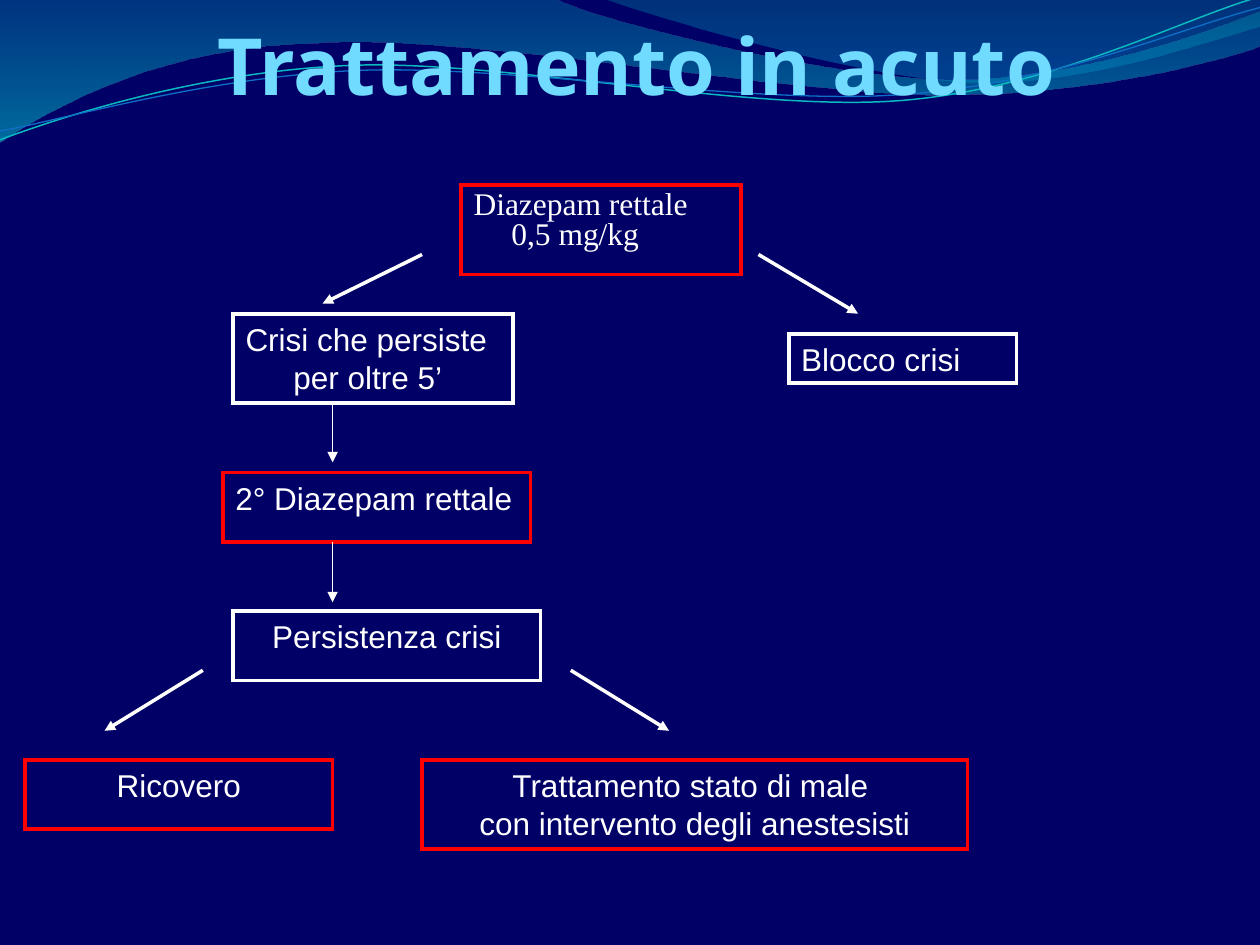
import pptx
import pptx.util
import pptx.dml.color
import pptx.enum.shapes
import pptx.enum.text
import pptx.oxml.ns
from lxml import etree

Inches, Pt = pptx.util.Inches, pptx.util.Pt
RGBColor = pptx.dml.color.RGBColor
ALIGN = pptx.enum.text.PP_ALIGN
ANCHOR = pptx.enum.text.MSO_ANCHOR
qn = pptx.oxml.ns.qn

NAVY = RGBColor(0x00, 0x00, 0x66)
WHITE = RGBColor(0xFF, 0xFF, 0xFF)
RED = RGBColor(0xFF, 0x00, 0x00)
SKY = RGBColor(0x71, 0xDA, 0xFF)
OCEAN = RGBColor(0x00, 0x74, 0xA1)
AQUA = RGBColor(0x00, 0xC6, 0xCF)
TEAL = RGBColor(0x00, 0xA1, 0xA9)
AZURE = RGBColor(0x00, 0x8B, 0xBF)
TURQUOISE = RGBColor(0x0A, 0xB8, 0xBF)
BLUE = RGBColor(0x0F, 0x6F, 0xC6)

# A segment of two numbers is a straight line, one of six a Bezier curve.
BROAD_WAVE = [(0, 0), (4.4, -0.01), (4.76, 0.17, 6.64, 0.63, 7.58, 0.63),
              (8.53, 0.63, 9.58, 0.26, 10, 0.09), (10.01, 0.36),
              (9.83, 0.44, 8.7, 0.76, 7.46, 0.75),
              (6.22, 0.75, 3.82, 0.28, 2.57, 0.34),
              (1.29, 0.36, 0.46, 0.83, -0.01, 1.13), (0, 0)]
RIGHT_WAVE = [(4.79, -0.01), (5.09, 0.11, 6.82, 0.62, 7.69, 0.65),
              (8.56, 0.69, 9.61, 0.32, 10, 0.21), (10, 0), (4.79, -0.01)]
UPPER_STRAND = [(0, 1.11), (0.48, 0.93, 1.58, 0.57, 2.77, 0.52),
                (3.95, 0.47, 5.93, 0.89, 7.13, 0.8),
                (8.33, 0.71, 9.38, 0.15, 9.98, -0.02)]
LOWER_STRAND = [(0, 1.04), (0.47, 0.96, 1.64, 0.61, 2.83, 0.56),
                (4.03, 0.51, 5.97, 0.84, 7.17, 0.75),
                (8.36, 0.67, 9.41, 0.21, 10, 0.06)]

# left, top, width, height, border, lines, text format
BOXES = [
    (3.66, 1.47, 2.22, 0.71, RED, ["Diazepam rettale 0,5 mg/kg"],
     dict(font="Times New Roman", hang=0.3, spacing=0.8, before=2)),
    (6.26, 2.65, 1.81, 0.39, WHITE, ["Blocco crisi"], {}),
    (1.85, 2.49, 2.22, 0.71, WHITE, ["Crisi che persiste per oltre 5’"], {}),
    (1.77, 3.75, 2.44, 0.55, RED, ["2° Diazepam rettale"], {}),
    (1.85, 4.85, 2.44, 0.55, WHITE, ["Persistenza crisi"], dict(align=ALIGN.CENTER)),
    (0.2, 6.03, 2.44, 0.55, RED, ["Ricovero"], dict(align=ALIGN.CENTER)),
    (3.35, 6.03, 4.33, 0.71, RED,
     ["Trattamento stato di male ", "con intervento degli anestesisti"],
     dict(align=ALIGN.CENTER)),
]

# start x, start y, end x, end y, width
ARROWS = [
    (6.02, 2.02, 6.81, 2.49, 2),
    (3.35, 2.02, 2.56, 2.41, 2),
    (2.64, 3.2, 2.64, 3.67, 0.75),
    (2.64, 4.3, 2.64, 4.78, 0.75),
    (1.61, 5.32, 0.83, 5.8, 2),
    (4.53, 5.32, 5.31, 5.8, 2),
]


def add_outline(slide, segments, close):
    """Join the segment ends by lines, then bend those that are curves."""
    ends = [(Inches(seg[-2]), Inches(seg[-1])) for seg in segments]
    builder = slide.shapes.build_freeform(*ends[0])
    builder.add_line_segments(ends[1:], close=False)
    s = builder.convert_to_shape()
    s.shadow.inherit = False
    path = next(s._element.iter(qn("a:path")))
    for line, seg in zip(path.findall(qn("a:lnTo")), segments[1:]):
        if len(seg) == 6:
            curve = etree.Element(qn("a:cubicBezTo"))
            for x, y in zip(seg[::2], seg[1::2]):
                etree.SubElement(curve, qn("a:pt"), x=str(Inches(x) - s.left),
                                 y=str(Inches(y) - s.top))
            path.replace(line, curve)
    if close:
        etree.SubElement(path, qn("a:close"))
    return s


def add_wave(slide, segments, stops):
    """Filled wave; each stop is position, colour, opacity percent."""
    s = add_outline(slide, segments, True)
    s.line.fill.background()
    s.fill.gradient()
    s.fill.gradient_angle = 270
    for stop, (position, color, opacity) in zip(s.fill.gradient_stops, stops):
        stop.position = position
        stop.color.rgb = color
    for clr, stop in zip(s._element.spPr.iter(qn("a:srgbClr")), stops):
        etree.SubElement(clr, qn("a:alpha"), val=str(stop[2] * 1000))


def add_strand(slide, segments, color, width):
    s = add_outline(slide, segments, False)
    s.fill.background()
    s.line.color.rgb = color
    s.line.width = Pt(width)


def set_text(tf, lines, font="Arial", size=18, color=WHITE, bold=False,
             align=ALIGN.LEFT, anchor=ANCHOR.TOP, hang=0.38, spacing=None, before=0):
    tf.word_wrap = True
    tf.vertical_anchor = anchor
    for i, line in enumerate(lines):
        p = tf.paragraphs[0] if i == 0 else tf.add_paragraph()
        p.alignment = align
        p.line_spacing = spacing
        p.space_before = Pt(before)
        if hang:
            pPr = p._p.get_or_add_pPr()
            pPr.set("marL", str(Inches(hang)))
            pPr.set("indent", str(-Inches(hang)))
        r = p.add_run()
        r.text = line
        r.font.name = font
        r.font.size = Pt(size)
        r.font.bold = bold
        r.font.color.rgb = color


def add_title(slide, text):
    sp = slide.shapes.add_textbox(Inches(0.55), Inches(0.31), Inches(9), Inches(0.57))
    tf = sp.text_frame
    tf.margin_left = tf.margin_right = tf.margin_bottom = 0
    set_text(tf, [text], font="Open Sans", size=45, color=SKY, bold=True,
             align=ALIGN.CENTER, anchor=ANCHOR.BOTTOM, hang=0)


def add_box(slide, left, top, width, height, border, lines, text_format):
    s = slide.shapes.add_shape(pptx.enum.shapes.MSO_SHAPE.RECTANGLE, Inches(left),
                               Inches(top), Inches(width), Inches(height))
    s.shadow.inherit = False
    s.fill.background()
    s.line.color.rgb = border
    s.line.width = Pt(2)
    etree.SubElement(s.line._get_or_add_ln(), qn("a:miter"), lim="800000")
    set_text(s.text_frame, lines, **text_format)


def add_arrow(slide, x1, y1, x2, y2, width):
    s = slide.shapes.add_connector(pptx.enum.shapes.MSO_CONNECTOR.STRAIGHT,
                                   Inches(x1), Inches(y1), Inches(x2), Inches(y2))
    s.line.color.rgb = WHITE
    s.line.width = Pt(width)
    etree.SubElement(s.line._get_or_add_ln(), qn("a:tailEnd"), type="triangle")
    etree.SubElement(s._element.spPr, qn("a:effectLst"))


def main():
    prs = pptx.Presentation()
    prs.slide_width, prs.slide_height = Inches(10), Inches(7.5)
    slide = prs.slides.add_slide(prs.slide_layouts[6])
    slide.background.fill.solid()
    slide.background.fill.fore_color.rgb = NAVY

    add_wave(slide, BROAD_WAVE, [(0, OCEAN, 45), (1, AQUA, 55)])
    add_wave(slide, RIGHT_WAVE, [(0, TEAL, 30), (0.8, AZURE, 45)])
    add_strand(slide, UPPER_STRAND, TURQUOISE, 0.85)
    add_strand(slide, LOWER_STRAND, BLUE, 0.75)
    add_title(slide, "Trattamento in acuto")
    for box in BOXES:
        add_box(slide, *box)
    for arrow in ARROWS:
        add_arrow(slide, *arrow)
    prs.save("out.pptx")


if __name__ == "__main__":
    main()
